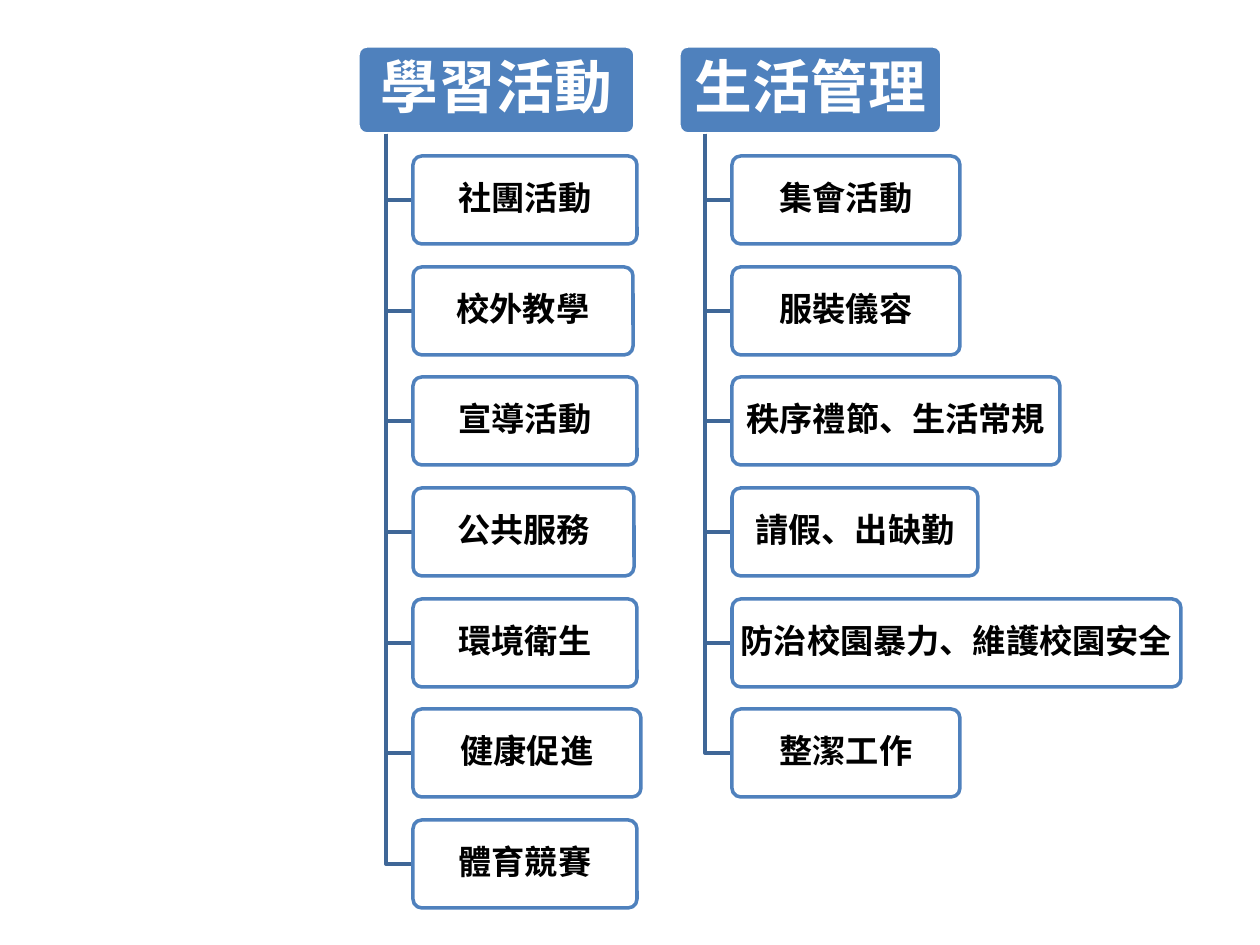
import pptx
import pptx.dml.color
import pptx.enum.shapes
import pptx.enum.text
import pptx.oxml.ns
import pptx.util
from lxml import etree

PX = 914400 / 126
COLORS = {"heading": "4F81BD", "edge": "4F81BD", "branch": "3F6797",
          "paper": "FFFFFF", "ink": "000000"}
HEADING = {"fill": "heading", "line": "paper", "ink": "paper", "size": 33, "inset": 11, "after": 12}
ITEM = {"fill": "paper", "line": "edge", "ink": "ink", "size": 19, "inset": 8, "after": 7, "alpha": 90}
BOX_HEIGHT = 88
FIRST_DROP = 110
ROW_STEP = 332 / 3

COLUMNS = [
    ((358, 46, 277), "學習活動", [
        ("社團活動", 224), ("校外教學", 220), ("宣導活動", 224), ("公共服務", 221),
        ("環境衛生", 224), ("健康促進", 228), ("體育競賽", 224)]),
    ((679, 46, 263), "生活管理", [
        ("集會活動", 228), ("服裝儀容", 228), ("秩序禮節、生活常規", 328),
        ("請假、出缺勤", 246), ("防治校園暴力、維護校園安全", 449), ("整潔工作", 228)]),
]


def emu(px):
    return pptx.util.Emu(round(px * PX))


def rgb(name):
    return pptx.dml.color.RGBColor.from_string(COLORS[name])


def assign(target, values):
    for attribute, value in values.items():
        setattr(target, attribute, value)


def outline(shape, color):
    shape.shadow.inherit = False
    shape.line.color.rgb = rgb(color)
    shape.line.width = pptx.util.Pt(2)


def add_label(slide, box, wording, look):
    label = slide.shapes.add_shape(
        pptx.enum.shapes.MSO_SHAPE.ROUNDED_RECTANGLE, *map(emu, box))
    label.adjustments[0] = 0.1
    outline(label, look["line"])
    label.fill.solid()
    label.fill.fore_color.rgb = rgb(look["fill"])
    if "alpha" in look:
        tint = label.fill._xPr.find(".//" + pptx.oxml.ns.qn("a:srgbClr"))
        etree.SubElement(tint, pptx.oxml.ns.qn("a:alpha"), val=str(look["alpha"] * 1000))
    inset = emu(look["inset"])
    assign(label.text_frame, {
        "word_wrap": False, "vertical_anchor": pptx.enum.text.MSO_ANCHOR.MIDDLE,
        "margin_left": inset, "margin_right": inset,
        "margin_top": inset, "margin_bottom": inset})
    line = label.text_frame.paragraphs[0]
    line.text = wording
    assign(line, {"alignment": pptx.enum.text.PP_ALIGN.CENTER, "line_spacing": 0.9,
                  "space_after": pptx.util.Pt(look["after"])})
    assign(line.font, {"name": "Calibri", "size": pptx.util.Pt(look["size"]), "bold": True})
    line.font.color.rgb = rgb(look["ink"])


def add_branch(slide, spine, top, item_left, middle):
    builder = slide.shapes.build_freeform(spine, top, scale=PX)
    builder.add_line_segments([(spine, middle), (item_left, middle)], close=False)
    branch = builder.convert_to_shape()
    branch.fill.background()
    outline(branch, "branch")


def add_column(slide, box, heading, items):
    left, top, width = box
    spine = round(left + width * 0.1)
    item_left = round(left + width * 0.2)
    add_label(slide, (left, top, width, BOX_HEIGHT), heading, HEADING)
    for row, (wording, item_width) in enumerate(items):
        item_top = round(top + FIRST_DROP + row * ROW_STEP)
        add_branch(slide, spine, top + BOX_HEIGHT, item_left, item_top + BOX_HEIGHT // 2)
        add_label(slide, (item_left, item_top, item_width, BOX_HEIGHT), wording, ITEM)


def main():
    deck = pptx.Presentation()
    assign(deck, {"slide_width": emu(1260), "slide_height": emu(945)})
    slide = deck.slides.add_slide(deck.slide_layouts[6])
    for box, heading, items in COLUMNS:
        add_column(slide, box, heading, items)
    deck.save("out.pptx")


if __name__ == "__main__":
    main()
